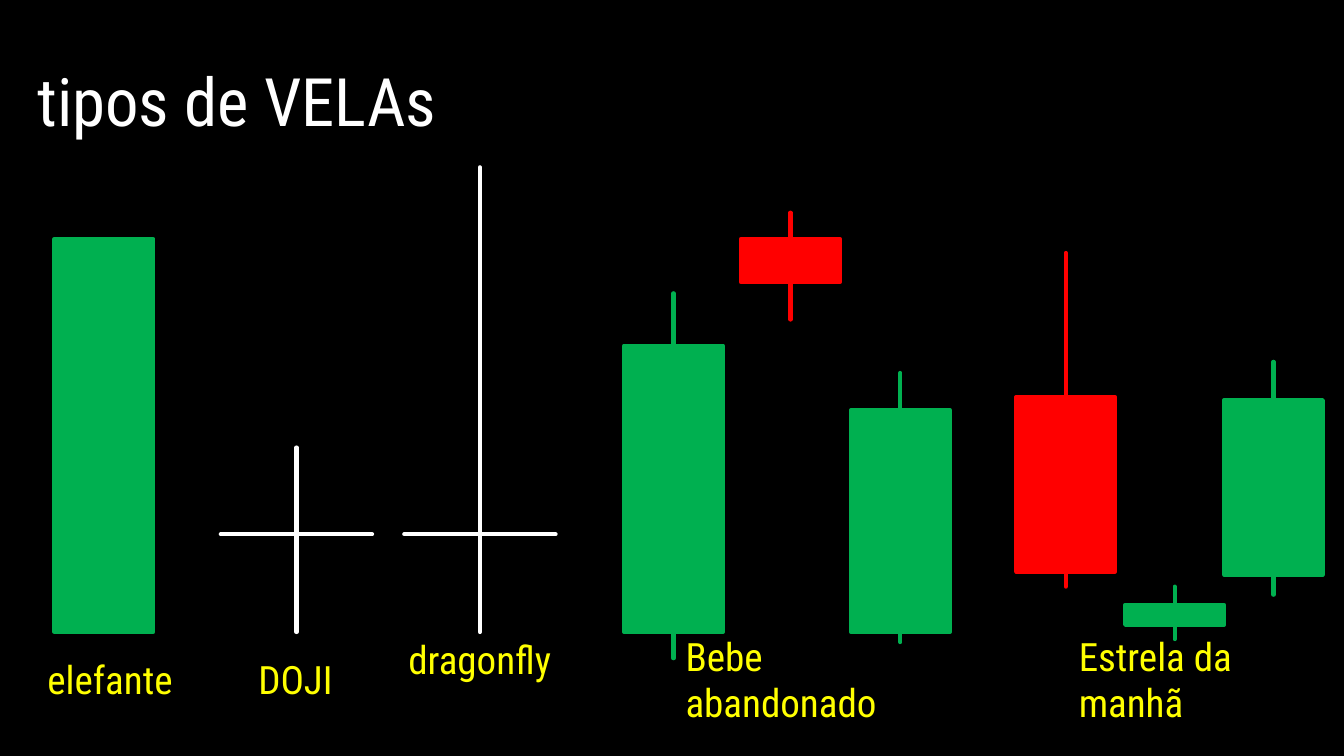
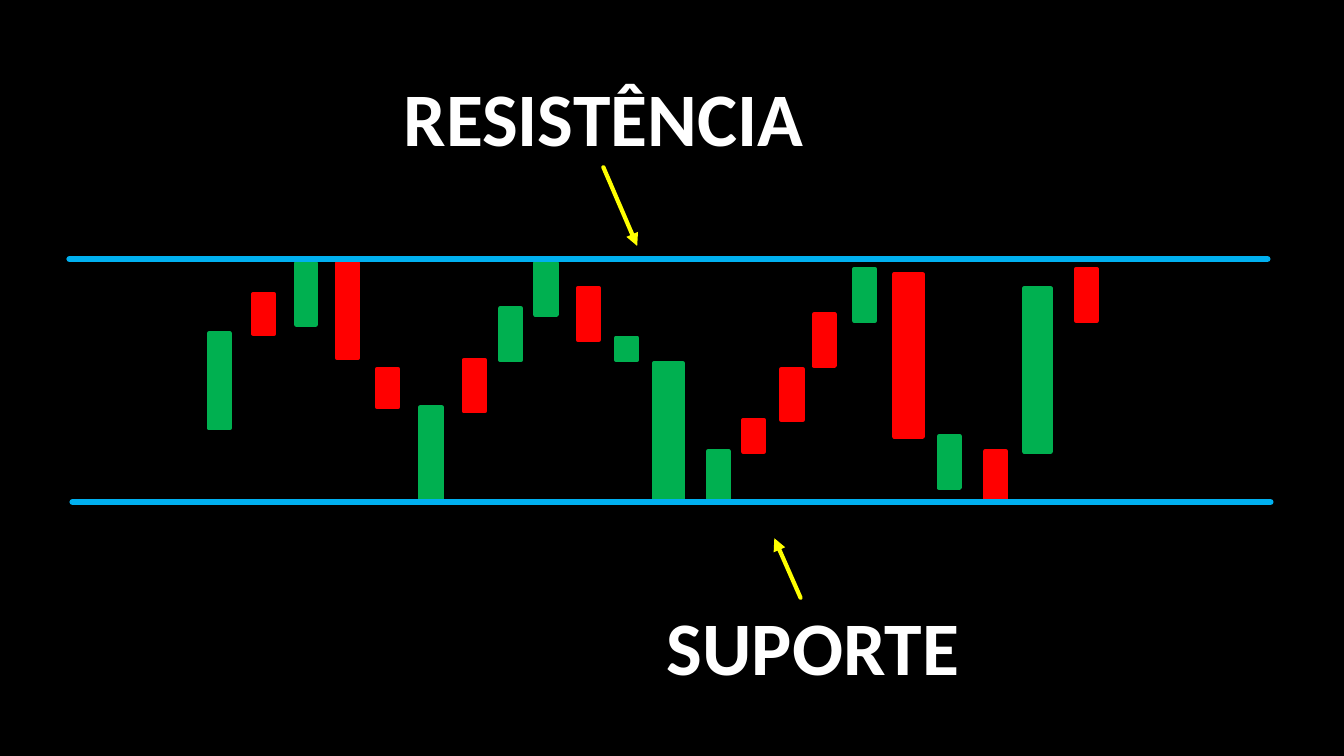
from dataclasses import dataclass
from typing import Optional

from lxml.etree import SubElement
from pptx import Presentation
from pptx.dml.color import RGBColor
from pptx.enum.shapes import MSO_CONNECTOR, MSO_SHAPE
from pptx.enum.text import MSO_ANCHOR, MSO_AUTO_SIZE, PP_ALIGN
from pptx.oxml.ns import qn
from pptx.util import Inches, Pt

HUES = {
    "black": "000000", "white": "FFFFFF", "yellow": "FFFF00",
    "up": "00B050", "down": "FF0000", "rail": "00B0F0",
}
HEAD, BOLD = "Roboto Condensed", "Calibri"


@dataclass
class Candle:
    left: float
    top: float
    high: float
    hue: str
    wide: float = 0.21
    peak: Optional[float] = None  # end of the upper wick
    low: Optional[float] = None  # end of the lower wick


@dataclass
class Label:
    text: str
    left: float
    top: float
    wide: float
    align: PP_ALIGN = PP_ALIGN.LEFT


def tint(name: str) -> RGBColor:
    return RGBColor.from_string(HUES[name])


def new_slide(deck):
    slide = deck.slides.add_slide(deck.slide_layouts[6])
    fill = slide.background.fill
    fill.solid()
    fill.fore_color.rgb = tint("black")
    return slide


def add_text(slide, text: str, left: float, top: float, wide: float, high: float, *,
             size: float, font: str, hue: str = "white", bold: bool = False,
             align: PP_ALIGN = PP_ALIGN.LEFT, grow: bool = False):
    box = slide.shapes.add_textbox(*map(Inches, (left, top, wide, high)))
    frame = box.text_frame
    frame.word_wrap = not grow
    if grow:
        frame.auto_size = MSO_AUTO_SIZE.SHAPE_TO_FIT_TEXT
    else:
        frame.vertical_anchor = MSO_ANCHOR.MIDDLE
        frame.margin_left = frame.margin_right = Inches(0.13)
        frame.margin_top = frame.margin_bottom = Inches(0.07)
    para = frame.paragraphs[0]
    para.alignment = align
    run = para.add_run()
    run.text = text
    run.font.size = Pt(size)
    run.font.name = font
    run.font.bold = bold
    run.font.color.rgb = tint(hue)
    return box


def add_line(shapes, start: tuple, end: tuple, hue: str, width: float = 3,
             arrow: bool = False):
    line = shapes.add_connector(MSO_CONNECTOR.STRAIGHT, *map(Inches, start + end))
    line.line.color.rgb = tint(hue)
    line.line.width = Pt(width)
    props = line._element.spPr
    edge = props.find(qn("a:ln"))
    edge.set("cap", "rnd")
    SubElement(edge, qn("a:round"))
    if arrow:
        SubElement(edge, qn("a:tailEnd"), type="triangle")
    SubElement(props, qn("a:effectLst"))
    return line


def add_candle(slide, item: Candle) -> None:
    body = slide.shapes.add_shape(
        MSO_SHAPE.RECTANGLE, *map(Inches, (item.left, item.top, item.wide, item.high)))
    body.shadow.inherit = False
    body.fill.solid()
    body.fill.fore_color.rgb = tint(item.hue)
    body.line.color.rgb = tint(item.hue)
    body.line.width = Pt(3)
    mid = item.left + item.wide / 2
    for side, edge, end in ((0, item.top, item.peak),
                            (2, item.top + item.high, item.low)):
        if end is not None:
            wick = add_line(slide.shapes, (mid, edge), (mid, end), item.hue)
            wick.begin_connect(body, side)


def add_cross(slide, mid: float, peak: float) -> None:
    shapes = slide.shapes.add_group_shape().shapes
    add_line(shapes, (mid, 6.27), (mid, peak), "white")
    add_line(shapes, (mid + 0.75, 5.3), (mid - 0.75, 5.3), "white")


def draw_types(deck) -> None:
    slide = new_slide(deck)
    add_text(slide, "tipos de VELAs", 0.24, 0.68, 8.91, 0.61, size=47.7, font=HEAD)

    # Candles and crosses
    wide = 0.98
    for item in (
        Candle(0.54, 2.37, 3.9, "up", wide),
        Candle(6.19, 3.43, 2.84, "up", wide, 2.91, 6.53),
        Candle(7.35, 2.37, 0.43, "down", wide, 2.11, 3.17),
        Candle(8.44, 4.07, 2.2, "up", wide, 3.7, 6.37),
        Candle(10.08, 3.94, 1.73, "down", wide, 2.51, 5.82),
        Candle(11.16, 6, 0.2, "up", wide, 5.82, 6.34),
        Candle(12.14, 3.97, 1.73, "up", wide, 3.59, 5.9),
    ):
        add_candle(slide, item)
    add_cross(slide, 2.94, 4.44)
    add_cross(slide, 4.76, 1.66)

    # Names below
    for tag in (
        Label("elefante", 0.34, 6.52, 1.68),
        Label("DOJI", 2.09, 6.52, 1.68, PP_ALIGN.CENTER),
        Label("dragonfly", 3.92, 6.32, 1.68),
        Label("Bebe abandonado", 6.67, 6.52, 2.57),
        Label("Estrela da manhã", 10.57, 6.52, 2.57),
    ):
        add_text(slide, tag.text, tag.left, tag.top, tag.wide, 0.43,
                 size=27.9, font=HEAD, hue="yellow", align=tag.align)


def draw_range(deck) -> None:
    slide = new_slide(deck)

    # Price candles, left to right
    for item in (
        Candle(2.07, 3.31, 0.94, "up"),
        Candle(2.51, 2.92, 0.39, "down"),
        Candle(2.94, 2.61, 0.61, "up", 0.19),
        Candle(3.34, 2.61, 0.94, "down"),
        Candle(3.74, 3.66, 0.38, "down"),
        Candle(4.17, 4.04, 0.94, "up"),
        Candle(4.6, 3.57, 0.51, "down"),
        Candle(4.96, 3.06, 0.51, "up"),
        Candle(5.31, 2.61, 0.51, "up"),
        Candle(5.73, 2.86, 0.51, "down"),
        Candle(6.11, 3.35, 0.22, "up"),
        Candle(6.49, 3.6, 1.38, "up", 0.28),
        Candle(7.02, 4.48, 0.51, "up"),
        Candle(7.37, 4.17, 0.31, "down"),
        Candle(7.75, 3.66, 0.51, "down"),
        Candle(8.07, 3.12, 0.51, "down"),
        Candle(8.47, 2.67, 0.51, "up"),
        Candle(8.87, 2.72, 1.61, "down", 0.28),
        Candle(9.31, 4.33, 0.51, "up"),
        Candle(9.77, 4.48, 0.51, "down"),
        Candle(10.16, 2.86, 1.62, "up", 0.26),
        Candle(10.67, 2.67, 0.51, "down"),
    ):
        add_candle(slide, item)

    # Resistance and support rails
    for left, top in ((0.69, 2.57), (0.72, 4.98)):
        add_line(slide.shapes, (left, top), (left + 11.88, top), "rail", 4.5)

    # Names with arrows
    roof, _ = [
        add_text(slide, tag.text, tag.left, tag.top, tag.wide, 1.01, size=54,
                 font=BOLD, bold=True, align=tag.align, grow=True)
        for tag in (Label("RESISTÊNCIA", 3.88, 0.65, 4.21, PP_ALIGN.CENTER),
                    Label("SUPORTE", 6.5, 5.9, 3.13, PP_ALIGN.CENTER))
    ]
    arrow = add_line(slide.shapes, (5.98, 1.66), (6.32, 2.44), "yellow", arrow=True)
    arrow.begin_connect(roof, 2)
    add_line(slide.shapes, (7.94, 5.93), (7.68, 5.34), "yellow", arrow=True)


def main() -> None:
    deck = Presentation()
    deck.slide_width, deck.slide_height = Inches(13.33), Inches(7.5)
    draw_types(deck)
    draw_range(deck)
    deck.save("out.pptx")


if __name__ == "__main__":
    main()
